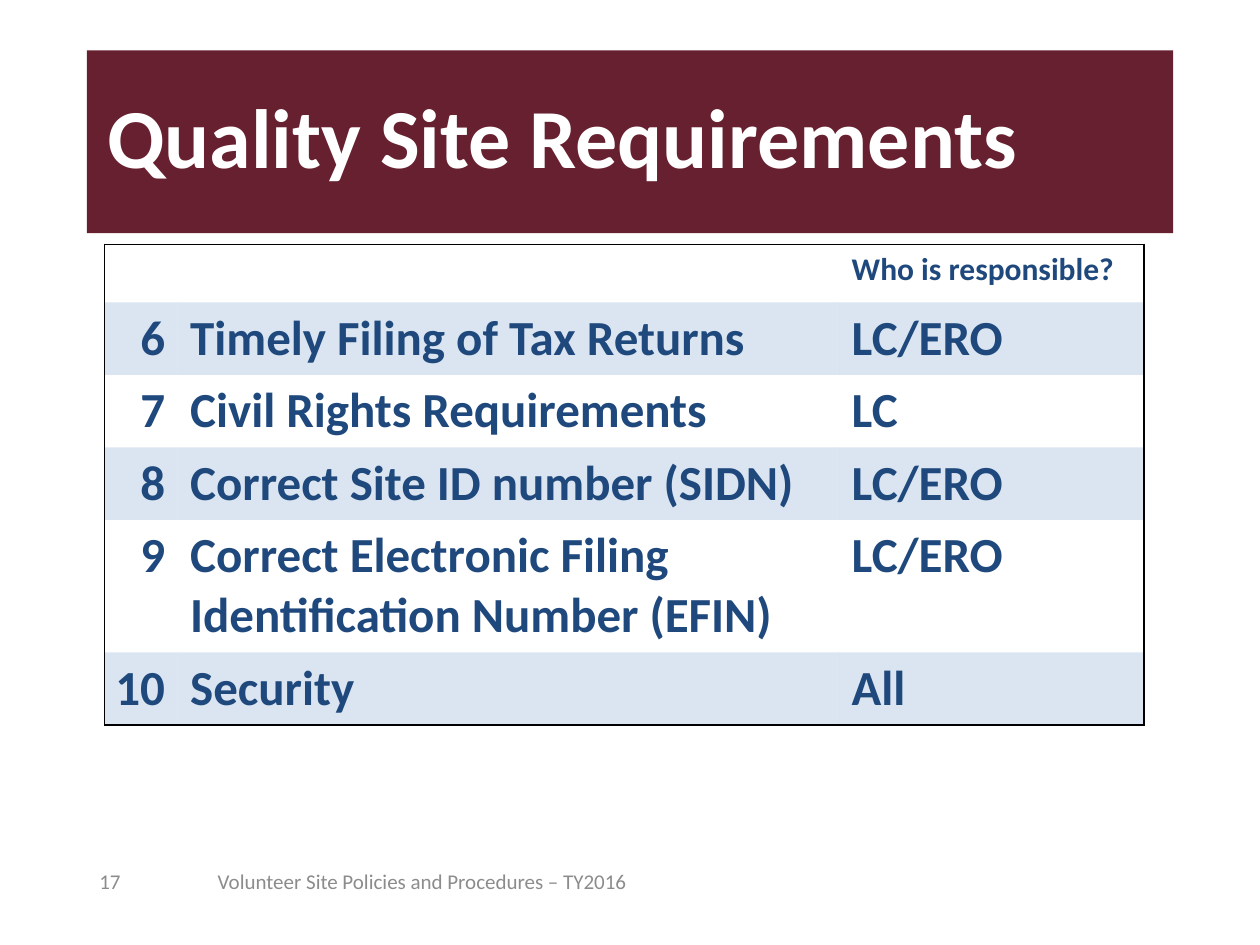
from dataclasses import dataclass

from lxml.etree import SubElement
from pptx import Presentation
from pptx.dml.color import RGBColor
from pptx.enum.text import MSO_ANCHOR, MSO_AUTO_SIZE, PP_ALIGN
from pptx.oxml import parse_xml
from pptx.oxml.ns import nsdecls, qn
from pptx.util import Inches, Pt


@dataclass(frozen=True)
class Theme:
    font: str = "Calibri"
    banner: str = "67202F"
    banner_text: str = "FFFFFF"
    table_text: str = "1F497D"
    band: str = "4F81BD"
    band_opacity: int = 20
    border: str = "000000"
    footer: str = "8C8C8C"
    title_size: int = 48
    header_size: int = 18
    body_size: int = 28
    footer_size: int = 12


@dataclass(frozen=True)
class Requirement:
    number: str
    name: str
    responsible: str
    height: float = 0.57


@dataclass(frozen=True)
class FooterItem:
    text: str
    left: float
    width: float


THEME = Theme()
COLUMN_WIDTHS = (0.58, 5.25, 2.42)
HEADER = Requirement("", "", "Who is responsible?", 0.46)
REQUIREMENTS = (
    Requirement("6", "Timely Filing of Tax Returns", "LC/ERO"),
    Requirement("7", "Civil Rights Requirements", "LC"),
    Requirement("8", "Correct Site ID number (SIDN)", "LC/ERO"),
    Requirement("9", "Correct Electronic Filing Identification Number (EFIN)",
                "LC/ERO", 1.05),
    Requirement("10", "Security", "All"),
)
FOOTER = (
    FooterItem("Volunteer Site Policies and Procedures – TY2016", 1.63, 3.77),
    FooterItem("17", 0.69, 0.7),
)


def add_run(paragraph, text: str, size: int, color: str, bold: bool = False) -> None:
    run = paragraph.add_run()
    run.text = text
    run.font.name = THEME.font
    run.font.size = Pt(size)
    run.font.bold = bold
    run.font.color.rgb = RGBColor.from_string(color)


def format_title(title) -> None:
    title.left, title.top = Inches(0.69), Inches(0.4)
    title.width, title.height = Inches(8.62), Inches(1.45)
    title.fill.solid()
    title.fill.fore_color.rgb = RGBColor.from_string(THEME.banner)
    frame = title.text_frame
    frame.auto_size = MSO_AUTO_SIZE.NONE
    frame.vertical_anchor = MSO_ANCHOR.MIDDLE
    paragraph = frame.paragraphs[0]
    paragraph.alignment = PP_ALIGN.LEFT
    paragraph.line_spacing = 0.9
    paragraph._p.get_or_add_pPr().set("marL", str(Inches(0.06)))
    add_run(paragraph, "Quality Site Requirements", THEME.title_size,
            THEME.banner_text, bold=True)


def set_borders(cell, drawn_edges: set[str]) -> None:
    """Rule the drawn edges (L, R, T, B) and clear the others."""
    properties = cell._tc.get_or_add_tcPr()
    for position, edge in enumerate("LRTB"):
        paint = (f'<a:solidFill><a:srgbClr val="{THEME.border}"/></a:solidFill>'
                 if edge in drawn_edges else "<a:noFill/>")
        line = parse_xml(f'<a:ln{edge} {nsdecls("a")} w="{Pt(1)}">{paint}</a:ln{edge}>')
        properties.insert(position, line)


def fill_cell(cell, banded: bool) -> None:
    if not banded:
        cell.fill.background()
        return
    cell.fill.solid()
    cell.fill.fore_color.rgb = RGBColor.from_string(THEME.band)
    color = cell._tc.tcPr.find(f".//{qn('a:solidFill')}/{qn('a:srgbClr')}")
    SubElement(color, qn("a:alpha")).set("val", str(THEME.band_opacity * 1000))


def add_requirements_table(slide) -> None:
    rows = (HEADER, *REQUIREMENTS)
    last_row, last_column = len(rows) - 1, len(COLUMN_WIDTHS) - 1
    table = slide.shapes.add_table(
        len(rows), len(COLUMN_WIDTHS), Inches(0.83), Inches(1.94),
        Inches(sum(COLUMN_WIDTHS)), Inches(sum(row.height for row in rows))).table
    table.first_row = table.horz_banding = False
    for column, width in zip(table.columns, COLUMN_WIDTHS):
        column.width = Inches(width)

    for r, row in enumerate(rows):
        table.rows[r].height = Inches(row.height)
        size = THEME.body_size if r else THEME.header_size
        for c, text in enumerate((row.number, row.name, row.responsible)):
            cell = table.cell(r, c)
            fill_cell(cell, banded=r % 2 == 1)
            outer = {"L": c == 0, "R": c == last_column,
                     "T": r == 0, "B": r == last_row}
            set_borders(cell, {edge for edge, drawn in outer.items() if drawn})
            paragraph = cell.text_frame.paragraphs[0]
            if c == 0:
                cell.margin_left = 0
                paragraph.alignment = PP_ALIGN.RIGHT
            if text:
                add_run(paragraph, text, size, THEME.table_text, bold=True)


def add_footer_item(slide, item: FooterItem) -> None:
    frame = slide.shapes.add_textbox(Inches(item.left), Inches(6.79),
                                     Inches(item.width), Inches(0.4)).text_frame
    frame.word_wrap = True
    frame.vertical_anchor = MSO_ANCHOR.MIDDLE
    add_run(frame.paragraphs[0], item.text, THEME.footer_size, THEME.footer)


def main() -> None:
    presentation = Presentation()
    presentation.slide_width, presentation.slide_height = Inches(10), Inches(7.5)
    title_only = presentation.slide_layouts[5]
    slide = presentation.slides.add_slide(title_only)
    format_title(slide.shapes.title)
    add_requirements_table(slide)
    for item in FOOTER:
        add_footer_item(slide, item)
    presentation.save("out.pptx")


if __name__ == "__main__":
    main()
